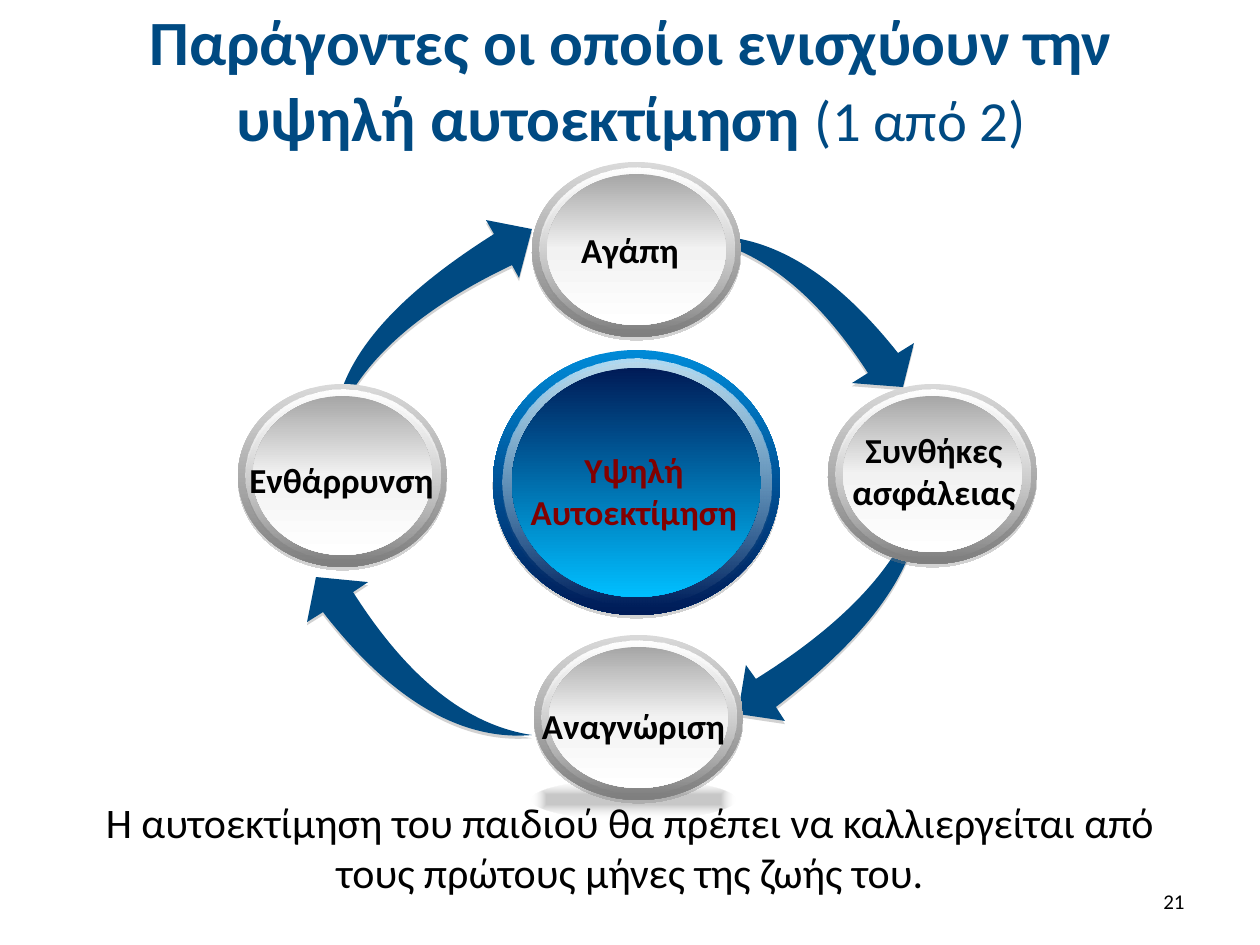
from dataclasses import dataclass
from math import cos, radians, sin
from typing import NamedTuple

from pptx import Presentation
from pptx.dml.color import RGBColor
from pptx.enum.shapes import MSO_SHAPE as Preset
from pptx.enum.text import MSO_ANCHOR as Anchor, MSO_AUTO_SIZE as AutoSize, PP_ALIGN as Align
from pptx.oxml import parse_xml
from pptx.oxml.ns import nsdecls, qn
from pptx.util import Pt

PX = 914400 / 126
COLORS = {
    "title": "004A82", "arrow": "004A82", "black": "000000", "white": "FFFFFF",
    "core_text": "820000", "core_light": "008AD7", "core_dark": "001B57",
    "core_glow": "00BFFF", "rim_light": "D9D9D9", "rim_dark": "7F7F7F",
    "face_light": "F2F2F2", "face_dark": "A6A6A6", "shadow": "808080",
}


class Point(NamedTuple):
    x: int
    y: int


class Box(NamedTuple):
    left: int
    top: int
    width: int
    height: int

    def inset(self, dx: int, dy: int) -> "Box":
        return Box(self.left + dx, self.top + dy, self.width - 2 * dx, self.height - 2 * dy)


class Stop(NamedTuple):
    position: int
    color: str
    alpha: int = 100


class Run(NamedTuple):
    text: str
    size: float
    color: str = "black"
    bold: bool = False


@dataclass
class Medallion:
    box: Box
    insets: tuple[tuple[int, int], tuple[int, int]]
    rim: list[Stop]
    gloss: list[Stop]
    face: list[Stop]
    label: Run
    label_box: Box


@dataclass
class Arrow:
    frame: Box
    rotation: float
    tail: Point
    outer: tuple[Point, Point, Point]
    head: list[Point]
    inner: tuple[Point, Point]


def emu(px: float) -> int:
    return round(px * PX)


def place(box: Box) -> list[int]:
    return [emu(value) for value in box]


def apply_format(target, values: dict) -> None:
    for name, value in values.items():
        setattr(target, name, value)


def move(shape, box: Box) -> None:
    apply_format(shape, dict(zip(("left", "top", "width", "height"), place(box))))


def add_shadow(shape) -> None:
    shape.shadow.inherit = False
    shape._element.spPr.find(qn("a:effectLst")).append(parse_xml(
        f'<a:outerShdw {nsdecls("a")} dist="22860" dir="5400000" rotWithShape="0">'
        f'<a:srgbClr val="{COLORS["shadow"]}"><a:alpha val="35000"/></a:srgbClr></a:outerShdw>'))


def add_ellipse(slide, box: Box, stops: list[Stop], shadow: bool, radial: bool = False) -> None:
    shape = slide.shapes.add_shape(Preset.OVAL, *place(box))
    shape.line.fill.background()
    shape.shadow.inherit = False
    marks = "".join(
        f'<a:gs pos="{stop.position * 1000}"><a:srgbClr val="{COLORS[stop.color]}">'
        f'<a:alpha val="{stop.alpha * 1000}"/></a:srgbClr></a:gs>' for stop in stops)
    direction = '<a:lin ang="5400000" scaled="0"/>'
    if radial:
        direction = ('<a:path path="shape"><a:fillToRect l="50000" t="50000" '
                     'r="50000" b="50000"/></a:path>')
    shape._element.spPr.insert(2, parse_xml(
        f'<a:gradFill {nsdecls("a")} rotWithShape="1"><a:gsLst>{marks}</a:gsLst>{direction}</a:gradFill>'))
    if shadow:
        add_shadow(shape)


def write_text(shape, runs: list[Run], align: Align, anchor: Anchor, before: int = 0) -> None:
    apply_format(shape.text_frame, {
        "word_wrap": True, "auto_size": AutoSize.NONE, "vertical_anchor": anchor})
    paragraph = shape.text_frame.paragraphs[0]
    apply_format(paragraph, {"alignment": align, "space_before": Pt(before)})
    for item in runs:
        run = paragraph.add_run()
        run.text = item.text
        apply_format(run.font, {"name": "Calibri", "size": Pt(item.size), "bold": item.bold})
        run.font.color.rgb = RGBColor.from_string(COLORS[item.color])


def add_text(slide, box: Box, run: Run, align=Align.CENTER, anchor=Anchor.TOP, before=0) -> None:
    write_text(slide.shapes.add_textbox(*place(box)), [run], align, anchor, before)


def add_medallion(slide, item: Medallion) -> None:
    add_ellipse(slide, item.box, item.rim, True)
    add_ellipse(slide, item.box.inset(*item.insets[0]), item.gloss, True)
    add_ellipse(slide, item.box.inset(*item.insets[1]), item.face, False)
    add_text(slide, item.label_box, item.label, before=4)


def to_frame(point: Point, frame: Box, rotation: float) -> tuple[int, int]:
    angle = radians(rotation)
    dx = point.x - frame.left - frame.width / 2
    dy = point.y - frame.top - frame.height / 2
    return (emu(dx * cos(angle) + dy * sin(angle) + frame.width / 2),
            emu(dy * cos(angle) - dx * sin(angle) + frame.height / 2))


def add_arrow(slide, arrow: Arrow) -> None:
    def local(*points: Point) -> list[tuple[int, int]]:
        return [to_frame(point, arrow.frame, arrow.rotation) for point in points]

    builder = slide.shapes.build_freeform(*local(arrow.tail)[0])
    builder.add_line_segments(local(arrow.outer[-1], *arrow.head, arrow.tail), close=True)
    shape = builder.convert_to_shape()
    move(shape, arrow.frame)
    shape.rotation = arrow.rotation
    outline = shape._element.spPr.find(".//" + qn("a:path"))
    curves = {1: arrow.outer, len(arrow.head) + 2: (*arrow.inner, arrow.tail)}
    corners = [arrow.tail, arrow.outer[-1], *arrow.head, arrow.tail]
    for index, corner in enumerate(corners):
        kind = "cubicBezTo" if index in curves else "lnTo" if index else "moveTo"
        marks = "".join(f'<a:pt x="{x}" y="{y}"/>' for x, y in local(*curves.get(index, (corner,))))
        outline.replace(outline[index], parse_xml(f'<a:{kind} {nsdecls("a")}>{marks}</a:{kind}>'))
    outline.set("w", str(emu(arrow.frame.width)))
    outline.set("h", str(emu(arrow.frame.height)))
    shape.fill.solid()
    shape.fill.fore_color.rgb = RGBColor.from_string(COLORS["arrow"])
    shape.line.fill.background()
    add_shadow(shape)


def factor(box: Box, text: str, label_box: Box) -> Medallion:
    return Medallion(
        box, ((7, 6), (15, 12)),
        [Stop(0, "rim_light"), Stop(100, "rim_dark")],
        [Stop(0, "white"), Stop(100, "white", 0)],
        [Stop(0, "face_dark"), Stop(50, "face_light"), Stop(100, "white")],
        Run(text, 20, bold=True), label_box)


CORE = Medallion(
    Box(493, 350, 287, 265), ((9, 9), (19, 18)),
    [Stop(0, "core_light"), Stop(100, "core_dark")],
    [Stop(0, "white", 70), Stop(100, "white", 0)],
    [Stop(0, "core_dark"), Stop(100, "core_glow")],
    Run("Υψηλή Aυτοεκτίμηση", 20, "core_text", True), Box(486, 442, 296, 84))
FACTORS = [
    factor(Box(532, 162, 209, 175), "Αγάπη", Box(530, 222, 200, 48)),
    factor(Box(238, 384, 209, 183), "Ενθάρρυνση", Box(233, 452, 217, 48)),
    factor(Box(828, 384, 209, 180), "Συνθήκες ασφάλειας", Box(834, 422, 200, 84)),
]
RECOGNITION = factor(Box(534, 635, 209, 165), "Αναγνώριση", Box(520, 698, 227, 48))
ARROWS = [
    Arrow(Box(297, 251, 261, 135), 157.2,
          Point(334, 430), (Point(336, 363), Point(391, 299), Point(494, 234)),
          [Point(486, 220), Point(532, 229), Point(519, 278), Point(512, 265)],
          (Point(413, 312), Point(354, 368))),
    Arrow(Box(704, 551, 263, 135), 332,
          Point(920, 496), (Point(922, 563), Point(874, 632), Point(776, 707)),
          [Point(785, 721), Point(738, 714), Point(746, 665), Point(756, 679)],
          (Point(849, 621), Point(905, 559))),
    Arrow(Box(694, 232, 232, 146), 242,
          Point(692, 237), (Point(761, 229), Point(830, 267), Point(898, 353)),
          [Point(914, 343), Point(903, 387), Point(852, 383), Point(868, 373)],
          (Point(815, 291), Point(756, 246))),
]
RETURN_ARROW = Arrow(
    Box(291, 590, 239, 146), 242,
    Point(532, 735), (Point(462, 741), Point(392, 701), Point(323, 612)),
    [Point(307, 622), Point(316, 577), Point(368, 582), Point(353, 592)],
    (Point(407, 677), Point(466, 725)))


def main() -> None:
    presentation = Presentation()
    apply_format(presentation, {"slide_width": emu(1260), "slide_height": emu(945)})
    slide = presentation.slides.add_slide(presentation.slide_layouts[5])
    title = slide.shapes.title
    move(title, Box(64, 16, 1134, 125))
    write_text(title, [Run("Παράγοντες οι οποίοι ενισχύουν την υψηλή αυτοεκτίμηση ", 36, "title", True),
                       Run("(1 από 2)", 32.4, "title")], Align.CENTER, Anchor.MIDDLE)
    add_text(slide, Box(903, 876, 294, 50), Run("21", 12), Align.RIGHT, Anchor.MIDDLE)
    for arrow in ARROWS:
        add_arrow(slide, arrow)
    for medallion in [CORE, *FACTORS]:
        add_medallion(slide, medallion)
    add_ellipse(slide, Box(532, 780, 203, 40),
                [Stop(24, "black", 22), Stop(100, "white", 0)], False, radial=True)
    add_medallion(slide, RECOGNITION)
    add_arrow(slide, RETURN_ARROW)
    add_text(slide, Box(63, 790, 1134, 139), Run(
        "Η αυτοεκτίμηση του παιδιού θα πρέπει να καλλιεργείται από "
        "τους πρώτους μήνες της ζωής του.", 24), before=12)
    presentation.save("out.pptx")


if __name__ == "__main__":
    main()
